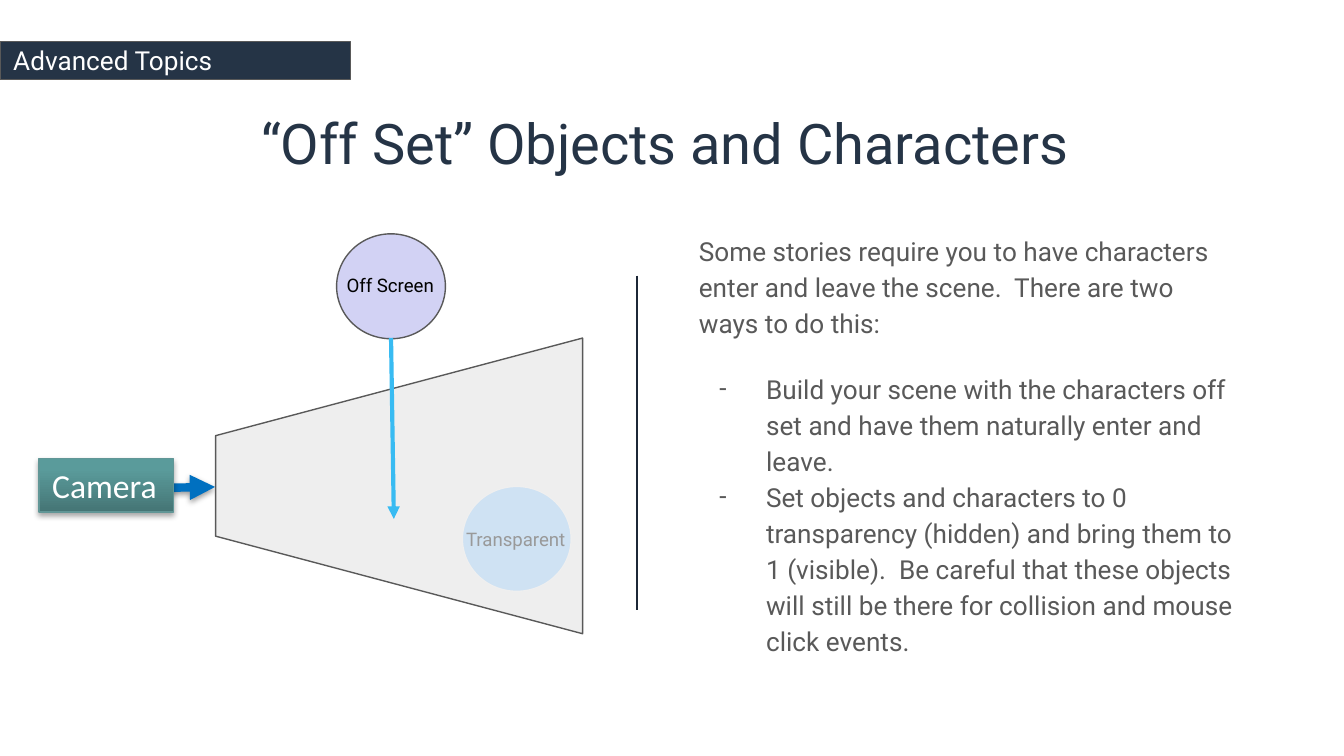
"""Build the slide on off-set objects and characters."""
from lxml.etree import SubElement
from pptx import Presentation
from pptx.dml.color import RGBColor
from pptx.enum.shapes import MSO_CONNECTOR, MSO_SHAPE
from pptx.enum.text import MSO_ANCHOR, MSO_AUTO_SIZE, PP_ALIGN
from pptx.oxml.ns import qn
from pptx.util import Pt

NAVY, GREY, WHITE = "253446", "595959", "FFFFFF"
TITLE = "“Off Set” Objects and Characters"
SECTION = "Advanced Topics"
INTRO = ("Some stories require you to have characters enter and leave the scene.  "
         "There are two ways to do this:")
WAYS = [
    "Build your scene with the characters off set and have them naturally enter and leave.",
    "Set objects and characters to 0 transparency (hidden) and bring them to 1 (visible).  "
    "Be careful that these objects will still be there for collision and mouse click events.",
]
TITLE_AREA = (20.9, 53.3, 671, 45.4)
BODY_AREA = (367.2, 115.2, 303.1, 244.8)
SECTION_AREA = (0, 22.3, 223.9, 20.2)
BANNER = (0, 22.3, 187.9, 20.2)
DIVIDER = (341.3, 147.6, 341.3, 326.9)
CAMERA_ARROW = (85, 261.4, 115.2, 260.9)
ENTRY_ARROW = (209.5, 181, 211, 278)
CAMERA = (20.9, 245.5, 72, 28.8)
VIEW = (134.6, 162, 158.4, 196.6)
CIRCLES = [
    ((180.3, 125.3, 58.3, 56.2), "D2D2F4", GREY),
    ((247.7, 260.6, 58.3, 56.2), "CFE2F3", "EFEFEF"),
]
LABELS = [
    ("Transparent", (242.6, 275.8, 90, 32.4), "999999"),
    ("Off Screen", (178.6, 139.7, 75.6, 24.5), "000000"),
]


def color(value):
    return RGBColor.from_string(value)


def points(values):
    return [Pt(value) for value in values]


def add_effects(shape, blur=0, distance=0, alpha=0):
    effects = SubElement(shape._element.spPr, qn("a:effectLst"))
    if alpha:
        shadow = SubElement(effects, qn("a:outerShdw"), blurRad=str(Pt(blur)),
                            dist=str(Pt(distance)), dir="5400000", rotWithShape="0")
        black = SubElement(shadow, qn("a:srgbClr"), val="000000")
        SubElement(black, qn("a:alpha"), val=str(alpha * 1000))


def add_line(page, ends, hue, width, arrow=False, **shadow):
    line = page.shapes.add_connector(MSO_CONNECTOR.STRAIGHT, *points(ends))
    line.line.color.rgb = color(hue)
    line.line.width = Pt(width)
    if arrow:
        SubElement(line.line._get_or_add_ln(), qn("a:tailEnd"), type="triangle")
    add_effects(line, **shadow)


def add_figure(page, kind, area, fill, outline):
    shape = page.shapes.add_shape(kind, *points(area))
    if fill:
        shape.fill.solid()
        shape.fill.fore_color.rgb = color(fill)
    shape.line.color.rgb = color(outline)
    shape.line.width = Pt(0.75)
    shape.shadow.inherit = False
    return shape


def prepare(box, area=None, inset=7.2, anchor=MSO_ANCHOR.MIDDLE):
    if area:
        box.left, box.top, box.width, box.height = points(area)
    frame = box.text_frame
    frame.word_wrap = True
    frame.auto_size = MSO_AUTO_SIZE.NONE
    frame.vertical_anchor = anchor
    frame.margin_left = frame.margin_right = Pt(7.2)
    frame.margin_top = frame.margin_bottom = Pt(inset)
    return frame


def write(para, text, size, hue, align=PP_ALIGN.LEFT, name="Roboto"):
    para.text = text
    para.alignment = align
    para.font.size = Pt(size)
    para.font.name = name
    para.font.color.rgb = color(hue)


def add_text(page, text, area, size, hue, anchor=MSO_ANCHOR.TOP):
    box = page.shapes.add_textbox(*points(area))
    write(prepare(box, anchor=anchor).paragraphs[0], text, size, hue)


def fill_body(frame):
    for index, text in enumerate([INTRO, *WAYS]):
        para = frame.paragraphs[0] if index == 0 else frame.add_paragraph()
        para.line_spacing = 1.15
        para.space_before = Pt(16 if index == 1 else 0)
        props = para._p.get_or_add_pPr()
        props.set("marL", str(Pt(36 if index else 0)))
        props.set("indent", str(Pt(-25 if index else 0)))
        if index:
            tint = SubElement(props, qn("a:buClr"))
            SubElement(tint, qn("a:srgbClr"), val=GREY)
            SubElement(props, qn("a:buFont"), typeface="Roboto")
            SubElement(props, qn("a:buChar"), char="-")
        else:
            SubElement(props, qn("a:buNone"))
        write(para, text, 14, GREY)


def add_camera(page):
    camera = add_figure(page, MSO_SHAPE.RECTANGLE, CAMERA, None, "619696")
    camera.fill.gradient()
    camera.fill.gradient_angle = 90
    stops = [(0, "457575"), (0.8, "5A9B9B")]
    for stop, (position, hue) in zip(camera.fill.gradient_stops, stops):
        stop.position = position
        stop.color.rgb = color(hue)
    camera.shadow.inherit = True
    add_effects(camera, blur=3.1, distance=1.8, alpha=35)
    frame = prepare(camera, inset=3.6)
    write(frame.paragraphs[0], "Camera", 18, WHITE, name="Calibri")


def main():
    deck = Presentation()
    deck.slide_width, deck.slide_height = Pt(720), Pt(405)
    page = deck.slides.add_slide(deck.slide_layouts[1])
    title, body = page.placeholders
    write(prepare(title, TITLE_AREA).paragraphs[0], TITLE, 30, NAVY, PP_ALIGN.CENTER)
    fill_body(prepare(body, BODY_AREA))

    add_figure(page, MSO_SHAPE.RECTANGLE, BANNER, NAVY, GREY)
    add_line(page, DIVIDER, "1C2736", 0.75)
    add_text(page, SECTION, SECTION_AREA, 14, WHITE, MSO_ANCHOR.MIDDLE)

    add_line(page, CAMERA_ARROW, "0070C0", 4.5, True, blur=3.1, distance=1.6, alpha=38)
    add_camera(page)
    view = add_figure(page, MSO_SHAPE.TRAPEZOID, VIEW, "EEEEEE", GREY)
    view.rotation = 270
    view.adjustments[0] = 0.33
    for area, fill, outline in CIRCLES:
        add_figure(page, MSO_SHAPE.OVAL, area, fill, outline)
    add_line(page, ENTRY_ARROW, "38BBF2", 2.25, True)
    for text, area, hue in LABELS:
        add_text(page, text, area, 10, hue)
    deck.save("out.pptx")


if __name__ == "__main__":
    main()
